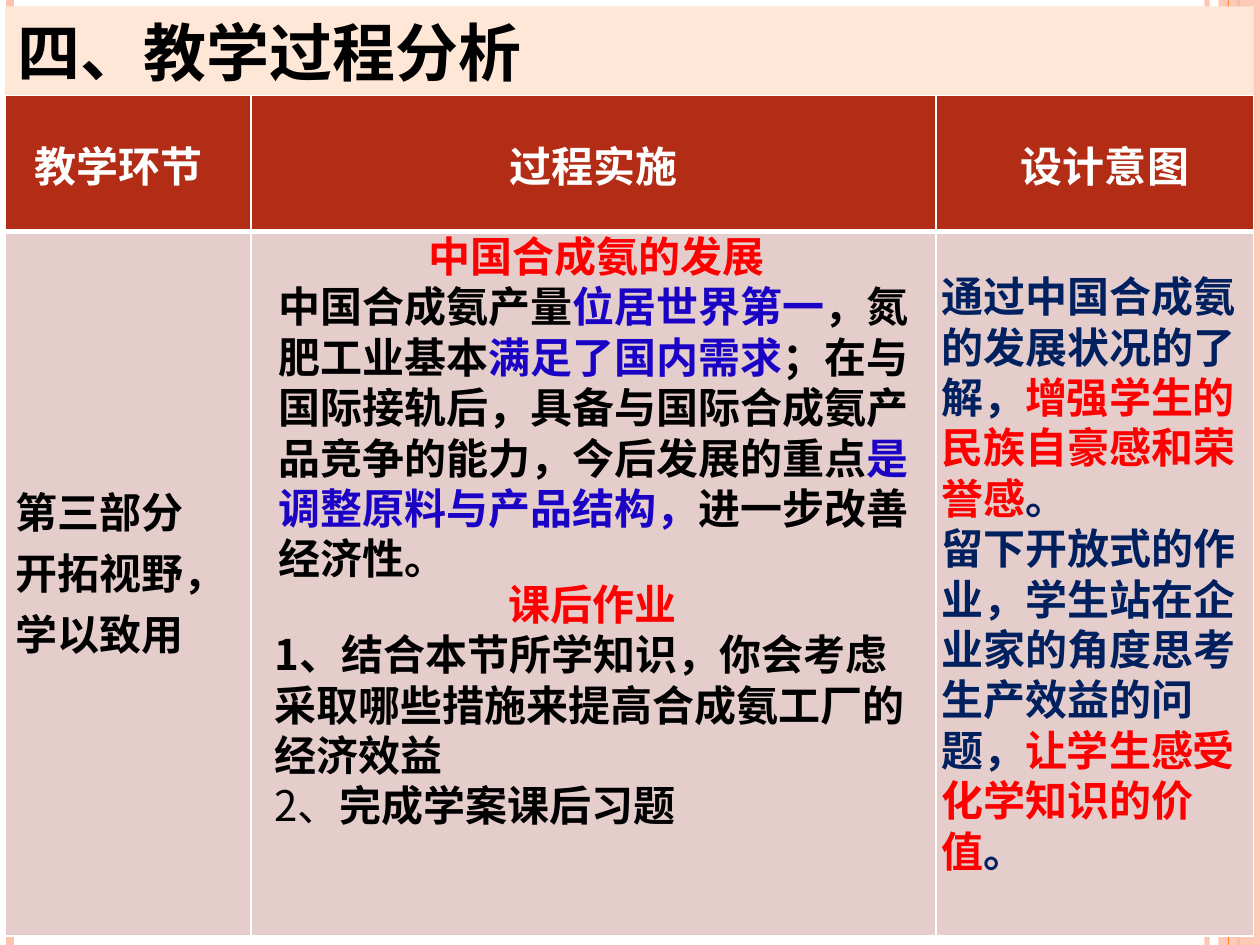
"""Build the teaching process slide: a titled table with text laid over its cells."""
from dataclasses import dataclass

from lxml.etree import SubElement
from pptx import Presentation
from pptx.dml.color import RGBColor
from pptx.enum.shapes import MSO_CONNECTOR, MSO_SHAPE
from pptx.enum.text import MSO_ANCHOR, PP_ALIGN
from pptx.oxml.ns import qn
from pptx.util import Inches, Pt


@dataclass(frozen=True)
class Theme:
    font: str = "Noto Sans CJK SC"
    title_size: float = 36
    body_size: float = 24
    black: str = "000000"
    white: str = "FFFFFF"
    red: str = "FF0000"
    blue: str = "1A03C5"
    navy: str = "002060"
    peach: str = "FEC3AE"
    orange: str = "FE8637"
    title_fill: str = "FFE7D7"
    header_fill: str = "B32C16"
    body_fill: str = "E5CDCC"


@dataclass(frozen=True)
class Span:
    text: str
    color: str
    bold: bool = True


@dataclass(frozen=True)
class Line:
    spans: tuple[Span, ...]
    align: PP_ALIGN = PP_ALIGN.LEFT


@dataclass(frozen=True)
class Note:
    left: float
    top: float
    width: float
    height: float
    lines: tuple[Line, ...]


@dataclass(frozen=True)
class Rail:
    x: float
    color: str
    weight: float
    opacity: int = 100


@dataclass(frozen=True)
class Heading:
    text: str
    align: PP_ALIGN
    left_margin: float


THEME = Theme()
CENTER = PP_ALIGN.CENTER
LEFT, TITLE_TOP, TABLE_TOP = 0.04, 0.05, 0.76
COLUMNS = (1.95, 5.44, 2.52)
ROWS = (1.08, 5.59)
RAILS_BELOW = (Rail(9.58, THEME.peach, 3, 93), Rail(0.08, THEME.peach, 4.5),
               Rail(9.83, THEME.orange, 1.5))
RAIL_ABOVE = Rail(9.75, THEME.orange, 0.75)
HEADINGS = (Heading("教学环节", PP_ALIGN.LEFT, 0.23),
            Heading("过程实施", CENTER, 0.08),
            Heading("设计意图", CENTER, 0.24))
STAGE = tuple(Line((Span(text, THEME.black),))
              for text in ("第三部分", "开拓视野，", "学以致用"))
HOMEWORK = Note(2.08, 4.54, 5.25, 2.52, (
    Line((Span("课后作业", THEME.red),), CENTER),
    Line((Span("1、结合本节所学知识，你会考虑采取哪些措施来提高合成氨工厂的经济效益", THEME.black),)),
    Line((Span("2、", THEME.black, False), Span("完成学案课后习题", THEME.black))),
))
INTENT = Note(7.37, 2.1, 2.72, 4.54, (
    Line((Span("通过中国合成氨的发展状况的了解，", THEME.navy),
          Span("增强学生的民族自豪感和荣誉感", THEME.red), Span("。", THEME.navy))),
    Line((Span("留下开放式的作业，学生站在企业家的角度思考生产效益的问题，", THEME.navy),
          Span("让学生感受化学知识的价值", THEME.red), Span("。", THEME.navy))),
))
DEVELOPMENT = Note(2.11, 1.78, 5.25, 2.93, (
    Line((Span("中国合成氨的发展", THEME.red),), CENTER),
    Line((Span("中国合成氨产量", THEME.black), Span("位居世界第一", THEME.blue),
          Span("，氮肥工业基本", THEME.black), Span("满足了国内需求", THEME.blue),
          Span("；在与国际接轨后，具备与国际合成氨产品竞争的能力，今后发展的重点", THEME.black),
          Span("是调整原料与产品结构，", THEME.blue), Span("进一步改善经济性。", THEME.black))),
))


def set_opacity(properties, percent: int) -> None:
    color = next(properties.iter(qn("a:srgbClr")))
    SubElement(color, qn("a:alpha"), val=str(percent * 1000))


def write(frame, lines: tuple[Line, ...], size: float) -> None:
    for index, line in enumerate(lines):
        paragraph = frame.add_paragraph() if index else frame.paragraphs[0]
        paragraph.alignment = line.align
        paragraph._p.get_or_add_pPr().set("hangingPunct", "0")
        for span in line.spans:
            run = paragraph.add_run()
            run.text = span.text
            run.font.size = Pt(size)
            run.font.bold = span.bold
            run.font.name = THEME.font
            run.font.color.rgb = RGBColor.from_string(span.color)
            SubElement(run.font._element, qn("a:ea"), typeface=THEME.font)


def draw_rail(slide, rail: Rail) -> None:
    line = slide.shapes.add_connector(
        MSO_CONNECTOR.STRAIGHT, Inches(rail.x), Inches(0), Inches(rail.x), Inches(7.5))
    line.line.color.rgb = RGBColor.from_string(rail.color)
    line.line.width = Pt(rail.weight)
    SubElement(line._element.spPr, qn("a:effectLst"))
    if rail.opacity < 100:
        set_opacity(line._element.spPr, rail.opacity)


def draw_panel(slide, left: float, top: float, width: float, height: float, color: str):
    panel = slide.shapes.add_shape(
        MSO_SHAPE.RECTANGLE, Inches(left), Inches(top), Inches(width), Inches(height))
    panel.shadow.inherit = False
    panel.fill.solid()
    panel.fill.fore_color.rgb = RGBColor.from_string(color)
    panel.line.fill.background()
    return panel


def draw_note(slide, note: Note) -> None:
    box = slide.shapes.add_textbox(
        Inches(note.left), Inches(note.top), Inches(note.width), Inches(note.height))
    box.text_frame.word_wrap = True
    write(box.text_frame, note.lines, THEME.body_size)


def style_cell(cell, color: str, top_weight: float, bottom_weight: float) -> None:
    properties = cell._tc.get_or_add_tcPr()
    for side, weight in (("L", 1), ("R", 1), ("T", top_weight), ("B", bottom_weight)):
        border = SubElement(properties, qn(f"a:ln{side}"), w=str(Pt(weight)))
        fill = SubElement(border, qn("a:solidFill"))
        SubElement(fill, qn("a:srgbClr"), val=THEME.white)
    cell.fill.solid()
    cell.fill.fore_color.rgb = RGBColor.from_string(color)
    cell.margin_left = cell.margin_right = Inches(0.08)
    cell.margin_top = cell.margin_bottom = Inches(0.04)


def draw_table(slide) -> None:
    table = slide.shapes.add_table(
        len(ROWS), len(COLUMNS), Inches(LEFT), Inches(TABLE_TOP),
        Inches(sum(COLUMNS)), Inches(sum(ROWS))).table
    table.horz_banding = False
    for row, height in zip(table.rows, ROWS):
        row.height = Inches(height)
    for index, (width, heading) in enumerate(zip(COLUMNS, HEADINGS)):
        table.columns[index].width = Inches(width)
        header = table.cell(0, index)
        style_cell(header, THEME.header_fill, 1, 3)
        style_cell(table.cell(1, index), THEME.body_fill, 3, 1)
        header.vertical_anchor = MSO_ANCHOR.MIDDLE
        header.margin_left = Inches(heading.left_margin)
        write(header.text_frame, (Line((Span(heading.text, THEME.white),), heading.align),),
              THEME.body_size)
    stage = table.cell(1, 0)
    stage.margin_top = Inches(1.97)
    write(stage.text_frame, STAGE, THEME.body_size)


def main() -> None:
    deck = Presentation()
    deck.slide_width, deck.slide_height = Inches(10), Inches(7.5)
    slide = deck.slides.add_slide(deck.slide_layouts[6])
    for rail in RAILS_BELOW:
        draw_rail(slide, rail)
    band = draw_panel(slide, 9.67, 0, 0.33, 7.5, THEME.peach)
    set_opacity(band._element.spPr, 87)
    draw_rail(slide, RAIL_ABOVE)
    title = draw_panel(slide, LEFT, TITLE_TOP, sum(COLUMNS), TABLE_TOP - TITLE_TOP,
                       THEME.title_fill)
    title.text_frame.vertical_anchor = MSO_ANCHOR.MIDDLE
    write(title.text_frame, (Line((Span("四、教学过程分析", THEME.black),)),), THEME.title_size)
    draw_table(slide)
    for note in (HOMEWORK, INTENT, DEVELOPMENT):
        draw_note(slide, note)
    deck.save("out.pptx")


if __name__ == "__main__":
    main()
